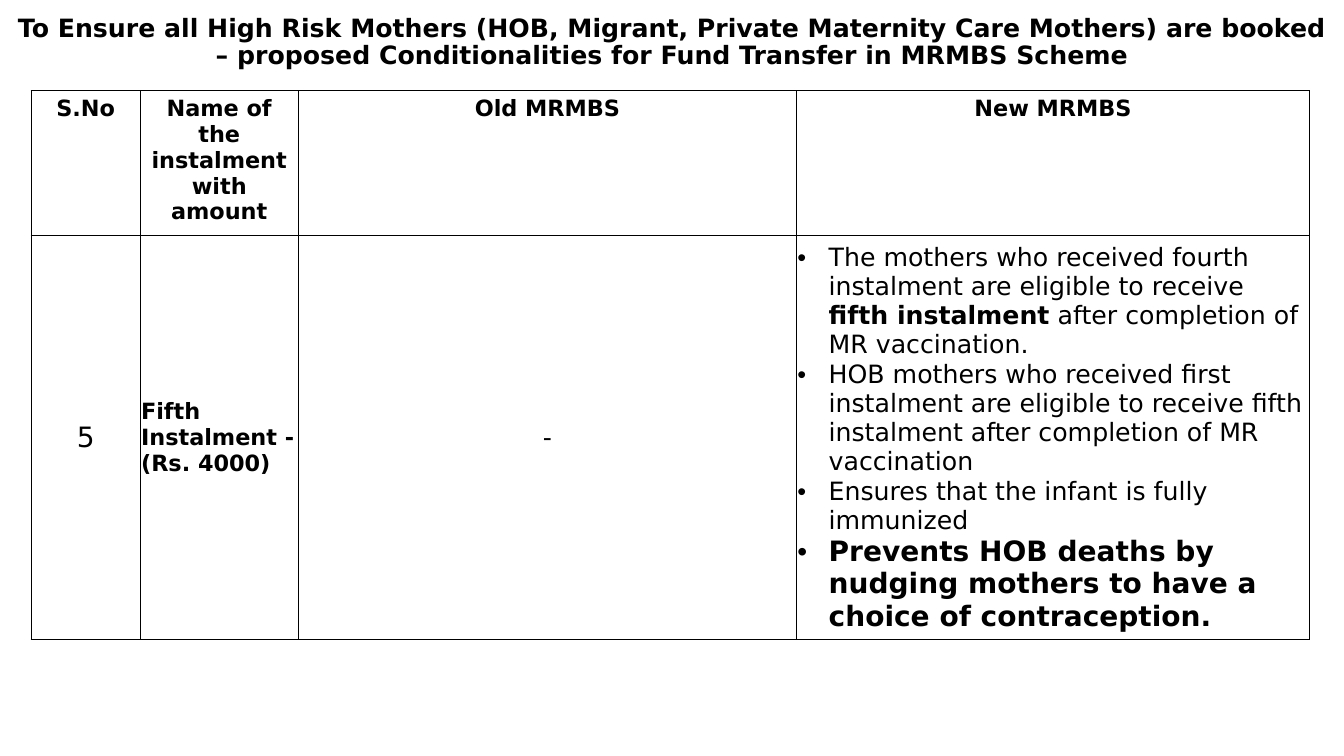
import pptx
import pptx.dml.color
import pptx.enum.text
import pptx.oxml
import pptx.oxml.ns
import pptx.util

Inches = pptx.util.Inches
Pt = pptx.util.Pt
ALIGN = pptx.enum.text.PP_ALIGN
MIDDLE = pptx.enum.text.MSO_ANCHOR.MIDDLE
TOP = pptx.enum.text.MSO_ANCHOR.TOP
BLACK = pptx.dml.color.RGBColor(0, 0, 0)
FONT = "DejaVu Sans"

TITLE = ("To Ensure all High Risk Mothers (HOB, Migrant, Private Maternity Care "
         "Mothers) are booked – proposed Conditionalities for Fund Transfer in "
         "MRMBS Scheme")
HEADS = ["S.No", "Name of the instalment with amount", "Old MRMBS", "New MRMBS"]
WIDTHS = [1.08, 1.57, 4.94, 5.09]
HEIGHTS = [1.39, 3.88]
TERMS = [
    [("The mothers who received fourth instalment are eligible to receive ", 18, False),
     ("fifth instalment", 18, True),
     (" after completion of MR vaccination.", 18, False)],
    [("HOB mothers who received first instalment are eligible to receive fifth "
      "instalment after completion of MR vaccination", 18, False)],
    [("Ensures that the infant is fully immunized", 18, False)],
    [("Prevents HOB deaths by nudging mothers to have a choice of contraception.",
      20, True)],
]
TIGHT = {"margin_left": Inches(0.01), "margin_right": Inches(0.01),
         "margin_top": Inches(0.01), "margin_bottom": Inches(0)}


def set_all(item, values):
    for name, value in values.items():
        setattr(item, name, value)


def add_runs(para, runs, align):
    """Fill a paragraph with (text, size, bold) runs."""
    para.alignment = align
    for text, size, bold in runs:
        run = para.add_run()
        run.text = text
        set_all(run.font, {"name": FONT, "size": Pt(size), "bold": bold})
        run.font.color.rgb = BLACK


def add_bullet(para):
    props = para._p.get_or_add_pPr()
    props.set("marL", str(Inches(0.31)))
    props.set("indent", str(-Inches(0.31)))
    space = pptx.oxml.ns.nsdecls("a")
    for tag in ('buFont {} typeface="Arial"', 'buChar {} char="•"'):
        props.append(pptx.oxml.parse_xml(f"<a:{tag.format(space)}/>"))


def add_edges(cell):
    props = cell._tc.get_or_add_tcPr()
    for side in "LRTB":
        props.append(pptx.oxml.parse_xml(
            f'<a:ln{side} {pptx.oxml.ns.nsdecls("a")} w="{Pt(1)}">'
            f'<a:solidFill><a:srgbClr val="{BLACK}"/></a:solidFill></a:ln{side}>'))


def fill_cell(cell, paras, align=ALIGN.CENTER, anchor=MIDDLE, margins=None, bullets=False):
    set_all(cell, {"vertical_anchor": anchor, **(margins or {})})
    add_edges(cell)
    cell.fill.background()
    frame = cell.text_frame
    for index, runs in enumerate(paras):
        para = frame.add_paragraph() if index else frame.paragraphs[0]
        add_runs(para, runs, align)
        if bullets:
            add_bullet(para)


def add_title(slide):
    box = slide.shapes.add_textbox(Inches(0), Inches(0.11), Inches(13.33), Inches(0.63))
    frame = box.text_frame
    set_all(frame, {"word_wrap": True, "vertical_anchor": MIDDLE})
    para = frame.paragraphs[0]
    para.line_spacing = 0.9
    add_runs(para, [(TITLE, 18, True)], ALIGN.CENTER)


def add_grid(slide):
    table = slide.shapes.add_table(
        len(HEIGHTS), len(WIDTHS), Inches(0.31), Inches(0.9),
        Inches(sum(WIDTHS)), Inches(sum(HEIGHTS))).table
    set_all(table, {"first_row": False, "horz_banding": False})
    for column, width in zip(table.columns, WIDTHS):
        column.width = Inches(width)
    for row, height in zip(table.rows, HEIGHTS):
        row.height = Inches(height)
    for index, head in enumerate(HEADS):
        fill_cell(table.cell(0, index), [[(head, 16, True)]], anchor=TOP)
    fill_cell(table.cell(1, 0), [[("5", 20, False)]])
    fill_cell(table.cell(1, 1), [[("Fifth Instalment - (Rs. 4000)", 16, True)]],
              align=ALIGN.LEFT, margins=TIGHT)
    fill_cell(table.cell(1, 2), [[("-", 18, False)]], margins=TIGHT)
    fill_cell(table.cell(1, 3), TERMS, align=ALIGN.LEFT, margins=TIGHT, bullets=True)


def main():
    deck = pptx.Presentation()
    set_all(deck, {"slide_width": Inches(13.33), "slide_height": Inches(7.5)})
    slide = deck.slides.add_slide(deck.slide_layouts[6])
    add_title(slide)
    add_grid(slide)
    deck.save("out.pptx")


if __name__ == "__main__":
    main()
